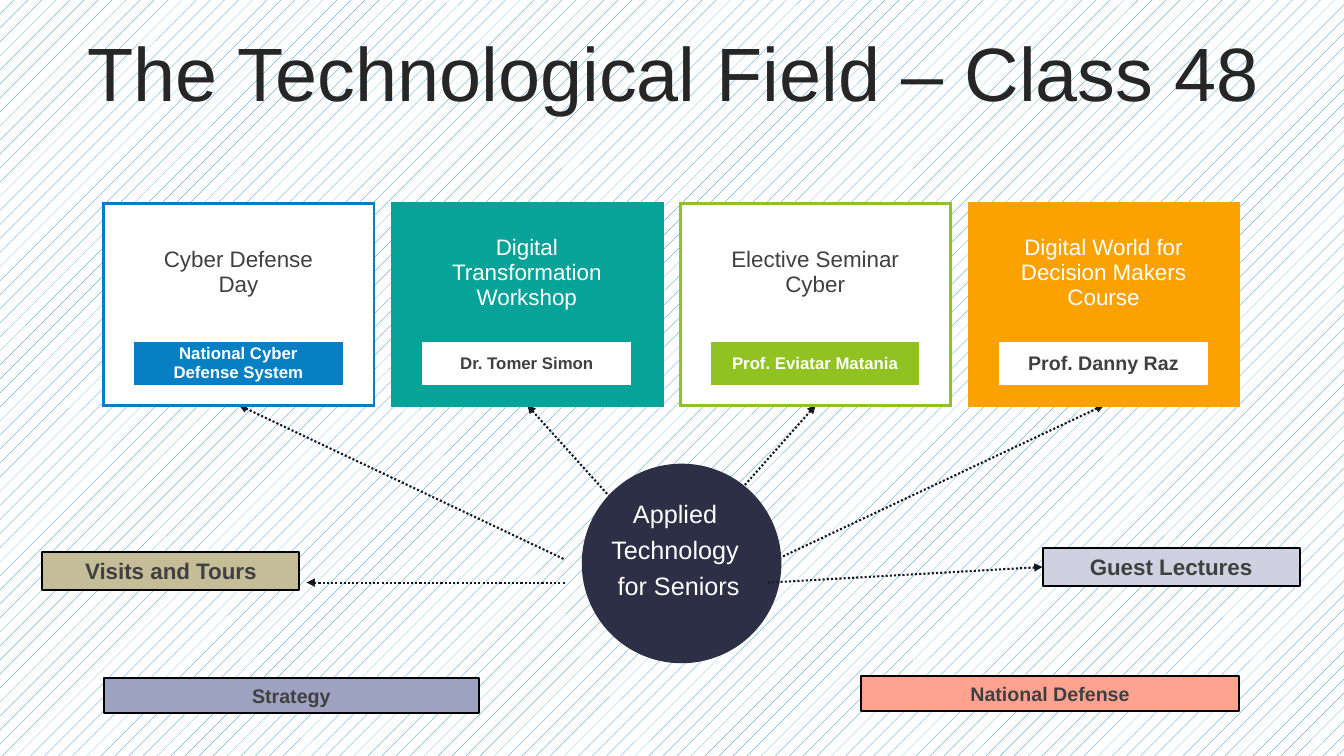
import pptx
import pptx.dml.color
import pptx.enum.dml
import pptx.enum.shapes
import pptx.enum.text
import pptx.oxml.ns
import pptx.util
from lxml import etree

Inches, Pt = pptx.util.Inches, pptx.util.Pt
RGBColor = pptx.dml.color.RGBColor
SHAPE = pptx.enum.shapes.MSO_SHAPE
ANCHOR = pptx.enum.text.MSO_ANCHOR
qn = pptx.oxml.ns.qn

WHITE = RGBColor(0xFF, 0xFF, 0xFF)
BLACK = RGBColor(0, 0, 0)
TITLE = RGBColor(0x26, 0x26, 0x26)
GREY = RGBColor(0x40, 0x40, 0x40)
INK = RGBColor(0x16, 0x18, 0x22)
NAVY = RGBColor(0x2C, 0x2F, 0x45)
BLUE = RGBColor(0x06, 0x80, 0xC3)
TEAL = RGBColor(0x07, 0xA3, 0x98)
GREEN = RGBColor(0x90, 0xC2, 0x21)
ORANGE = RGBColor(0xFB, 0xA2, 0x00)
SALMON = RGBColor(0xFF, 0xA2, 0x90)
LAVENDER = RGBColor(0x9E, 0xA2, 0xC1)
PALE = RGBColor(0xCF, 0xD1, 0xE0)
SAND = RGBColor(0xC4, 0xBD, 0x97)

CARD_TOP, CARD_PITCH = 2.02, 2.86
CARD_COLS = (0.3, 2.07, 0.31)
CARD_ROWS = (0.2, 0.97, 0.2, 0.43, 0.2)


def write(tf, text, size=16, color=GREY, bold=False, before=0, spacing=None):
    """Fill a text frame with centred paragraphs, one for each line of text."""
    tf.word_wrap = True
    tf.vertical_anchor = ANCHOR.MIDDLE
    for i, line in enumerate(text.split("\n")):
        p = tf.add_paragraph() if i else tf.paragraphs[0]
        p.alignment = pptx.enum.text.PP_ALIGN.CENTER
        p.space_before = Pt(before)
        if spacing:
            p.line_spacing = spacing
        r = p.add_run()
        r.text = line
        r.font.name, r.font.size, r.font.bold = "Arial", Pt(size), bold
        r.font.color.rgb = color


def add_box(s, kind, left, top, width, height, fill, outlined=True):
    sp = s.shapes.add_shape(kind, Inches(left), Inches(top), Inches(width), Inches(height))
    sp.shadow.inherit = False
    sp.fill.solid()
    sp.fill.fore_color.rgb = fill
    if outlined:
        sp.line.color.rgb, sp.line.width = BLACK, Pt(1.5)
    else:
        sp.line.fill.background()
    return sp


def add_label(s, text, left, top, width, height, fill, size):
    sp = add_box(s, SHAPE.RECTANGLE, left, top, width, height, fill)
    write(sp.text_frame, text, size=size, bold=True)
    sp.text_frame.auto_size = pptx.enum.text.MSO_AUTO_SIZE.SHAPE_TO_FIT_TEXT
    return sp


def add_arrow(s, x1, y1, x2, y2):
    """Dotted connector with its arrowhead at the first point."""
    c = s.shapes.add_connector(pptx.enum.shapes.MSO_CONNECTOR.STRAIGHT,
                               Inches(x1), Inches(y1), Inches(x2), Inches(y2))
    c.line.color.rgb, c.line.width = INK, Pt(1.5)
    c.line.dash_style = pptx.enum.dml.MSO_LINE.ROUND_DOT
    ln = c._element.spPr.find(qn("a:ln"))
    etree.SubElement(ln, qn("a:headEnd"), type="triangle")
    etree.SubElement(c._element.spPr, qn("a:effectLst"))
    return c


def set_borders(cell, color, sides):
    """Draw the named sides of a cell and clear the others."""
    tcPr = cell._tc.get_or_add_tcPr()
    for i, side in enumerate("LRTB"):
        ln = etree.Element(qn("a:ln" + side))
        if side in sides:
            ln.set("w", str(int(Pt(2.25))))
            fill = etree.SubElement(ln, qn("a:solidFill"))
            etree.SubElement(fill, qn("a:srgbClr"), val=str(color))
        else:
            etree.SubElement(ln, qn("a:noFill"))
        tcPr.insert(i, ln)


def add_card(s, left, accent, solid, topic, host, host_size):
    """Table card: a topic above a contrasting badge with the host."""
    body, badge = (accent, WHITE) if solid else (WHITE, accent)
    topic_color, host_color = (WHITE, GREY) if solid else (GREY, WHITE)
    n_rows, n_cols = len(CARD_ROWS), len(CARD_COLS)
    tbl = s.shapes.add_table(n_rows, n_cols, Inches(left), Inches(CARD_TOP),
                             Inches(sum(CARD_COLS)), Inches(sum(CARD_ROWS))).table
    tbl.first_row = tbl.horz_banding = False
    for col, width in zip(tbl.columns, CARD_COLS):
        col.width = Inches(width)
    for row, height in zip(tbl.rows, CARD_ROWS):
        row.height = Inches(height)
    texts = {(1, 1): (topic, 16, topic_color, False),
             (3, 1): (host, host_size, host_color, True)}
    for r in range(n_rows):
        for c in range(n_cols):
            cell = tbl.cell(r, c)
            cell.margin_top = cell.margin_bottom = 0
            cell.fill.solid()
            cell.fill.fore_color.rgb = badge if (r, c) == (3, 1) else body
            sides = (("L" if c == 0 else "") + ("R" if c == n_cols - 1 else "")
                     + ("T" if r == 0 else "") + ("B" if r == n_rows - 1 else ""))
            set_borders(cell, accent, sides)
            if (r, c) in texts:
                text, size, color, bold = texts[r, c]
                write(cell.text_frame, text, size=size, color=color, bold=bold)
                cell.vertical_anchor = ANCHOR.MIDDLE
            else:
                # Small empty text keeps the narrow rows at their height
                p = cell.text_frame.paragraphs[0]
                etree.SubElement(p._p, qn("a:endParaRPr"), sz="800")


def main():
    prs = pptx.Presentation()
    prs.slide_width, prs.slide_height = Inches(13.33), Inches(7.5)
    s = prs.slides.add_slide(prs.slide_layouts[5])

    # Patterned background
    bg = s.background.fill
    bg.patterned()
    bg.pattern = pptx.enum.dml.MSO_PATTERN.PERCENT_5
    bg.fore_color.rgb, bg.back_color.rgb = BLUE, WHITE

    # Title
    sp = s.shapes.title
    sp.left, sp.top, sp.width, sp.height = (Inches(v) for v in (0.35, 0.37, 12.66, 0.79))
    write(sp.text_frame, "The Technological Field – Class 48", size=54, color=TITLE,
          spacing=0.9)

    # Arrows from the hub to the cards
    for x, hub_x, hub_y in ((5.23, 6.67, 5.62), (2.37, 5.6, 5.55),
                            (8.09, 6.67, 5.62), (10.95, 7.7, 5.55)):
        add_arrow(s, x, 4.02, hub_x, hub_y)

    # Bottom labels
    add_label(s, "National Defense", 8.54, 6.71, 3.75, 0.34, SALMON, 14)
    add_label(s, "Strategy", 1.03, 6.73, 3.72, 0.34, LAVENDER, 14)

    # Hub
    add_box(s, SHAPE.OVAL, 5.77, 4.6, 1.98, 1.98, NAVY, outlined=False)
    sp = s.shapes.add_textbox(Inches(5.91), Inches(5.03), Inches(1.64), Inches(0.84))
    write(sp.text_frame, "Applied \nTechnology \nfor Seniors", size=18, color=WHITE, before=4)

    # Cards
    cards = (
        (BLUE, False, "Cyber Defense Day", "National Cyber Defense System", 12),
        (TEAL, True, "Digital Transformation Workshop", "Dr. Tomer Simon", 12),
        (GREEN, False, "Elective Seminar\nCyber", "Prof. Eviatar Matania", 12),
        (ORANGE, True, "Digital World for Decision Makers Course", "Prof. Danny Raz", 14),
    )
    for i, card in enumerate(cards):
        add_card(s, 1.03 + i * CARD_PITCH, *card)

    # Side labels and their arrows
    guests = add_label(s, "Guest Lectures", 10.34, 5.44, 2.55, 0.37, PALE, 16)
    add_arrow(s, 10.34, 5.63, 7.62, 5.78).begin_connect(guests, 1)
    add_arrow(s, 3.04, 5.78, 5.6, 5.78)
    add_label(s, "Visits and Tours", 0.42, 5.48, 2.55, 0.37, SAND, 16)

    prs.save("out.pptx")


if __name__ == "__main__":
    main()
